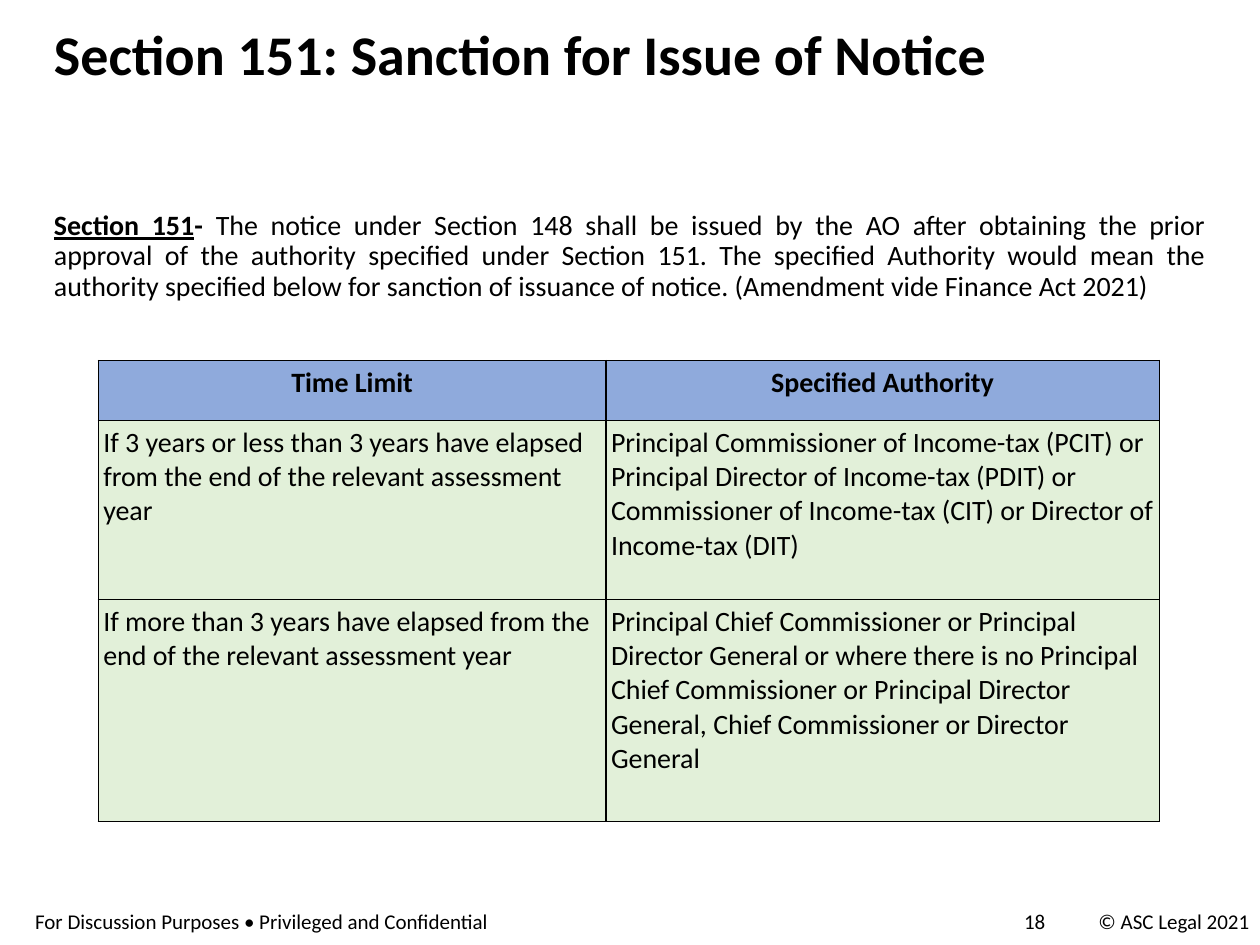
"""Builds the slide on Section 151 sanction for issue of notice."""
import pptx
import pptx.dml.color
import pptx.enum.text
import pptx.oxml
import pptx.oxml.ns
import pptx.util

Inches = pptx.util.Inches
Pt = pptx.util.Pt
RGBColor = pptx.dml.color.RGBColor
ALIGN = pptx.enum.text.PP_ALIGN

BLACK = RGBColor(0x00, 0x00, 0x00)
BLUE = RGBColor(0x8F, 0xAA, 0xDC)
GREEN = RGBColor(0xE2, 0xF0, 0xD9)

ROWS = [
    ("Time Limit", "Specified Authority"),
    ("If 3 years or less than 3 years have elapsed from the end of the relevant assessment year",
     "Principal Commissioner of Income-tax (PCIT) or Principal Director of Income-tax (PDIT) or "
     "Commissioner of Income-tax (CIT) or Director of Income-tax (DIT)"),
    ("If more than 3 years have elapsed from the end of the relevant assessment year",
     "Principal Chief Commissioner or Principal Director General or where there is no Principal "
     "Chief Commissioner or Principal Director General, Chief Commissioner or Director General"),
]


def add_run(p, text, size=16, bold=False, underline=False, font="Calibri", color=BLACK):
    r = p.add_run()
    r.text = text
    r.font.name = font
    r.font.size = Pt(size)
    r.font.bold = bold
    r.font.underline = underline
    r.font.color.rgb = color


class SlideBuilder:
    def __init__(self, slide, border=0.75, inset=0.04):
        self.slide = slide
        self.border = border
        self.inset = inset

    def text(self, left, top, width, height, runs, align=ALIGN.LEFT, spacing=1.0, wrap=True):
        sp = self.slide.shapes.add_textbox(Inches(left), Inches(top), Inches(width), Inches(height))
        tf = sp.text_frame
        tf.word_wrap = wrap
        p = tf.paragraphs[0]
        p.alignment = align
        p.line_spacing = spacing
        for text, fmt in runs:
            add_run(p, text, **fmt)

    def cell(self, cell, text, header):
        inset = Inches(self.inset)
        cell.margin_left = cell.margin_right = cell.margin_top = cell.margin_bottom = inset
        tcPr = cell._tc.get_or_add_tcPr()
        for side in ("lnL", "lnR", "lnT", "lnB"):
            tcPr.append(pptx.oxml.parse_xml(
                f'<a:{side} {pptx.oxml.ns.nsdecls("a")} w="{Pt(self.border)}">'
                f'<a:solidFill><a:srgbClr val="{BLACK}"/></a:solidFill></a:{side}>'))
        cell.fill.solid()
        cell.fill.fore_color.rgb = BLUE if header else GREEN
        p = cell.text_frame.paragraphs[0]
        p.alignment = ALIGN.CENTER if header else ALIGN.LEFT
        add_run(p, text, bold=header)

    def table(self, left, top, widths, heights, rows):
        table = self.slide.shapes.add_table(
            len(rows), len(widths), Inches(left), Inches(top),
            Inches(sum(widths)), Inches(sum(heights))).table
        for column, width in zip(table.columns, widths):
            column.width = Inches(width)
        for i, (height, texts) in enumerate(zip(heights, rows)):
            table.rows[i].height = Inches(height)
            for j, text in enumerate(texts):
                self.cell(table.cell(i, j), text, header=i == 0)


def main():
    prs = pptx.Presentation()
    prs.slide_width, prs.slide_height = Inches(10), Inches(7.5)
    s = SlideBuilder(prs.slides.add_slide(prs.slide_layouts[6]))

    footers = [
        (8.62, 1.47, "© ASC Legal 2021", True),
        (0.18, 3.92, "For Discussion Purposes • Privileged and Confidential", True),
        (8.03, 0.4, "18", False),
    ]
    for left, width, text, wrap in footers:
        s.text(left, 7.16, width, 0.3, [(text, {"size": 12})], wrap=wrap)

    s.text(0.33, 1.63, 9.34, 0.9, [
        ("Section 151", {"bold": True, "underline": True}),
        ("- ", {"bold": True}),
        ("The notice under Section 148 shall be issued by the AO after obtaining the prior approval "
         "of the authority specified under Section 151. The specified Authority would mean the "
         "authority specified below for sanction of issuance of notice. "
         "(Amendment vide Finance Act 2021)", {}),
    ], align=ALIGN.JUSTIFY, spacing=0.9)
    s.text(0.33, 0.25, 7.74, 0.77,
           [("Section 151: Sanction for Issue of Notice", {"size": 32, "bold": True})], spacing=0.7)
    s.table(0.78, 2.86, [4.03, 4.39], [0.48, 1.42, 1.76], ROWS)

    prs.save("out.pptx")


if __name__ == "__main__":
    main()
